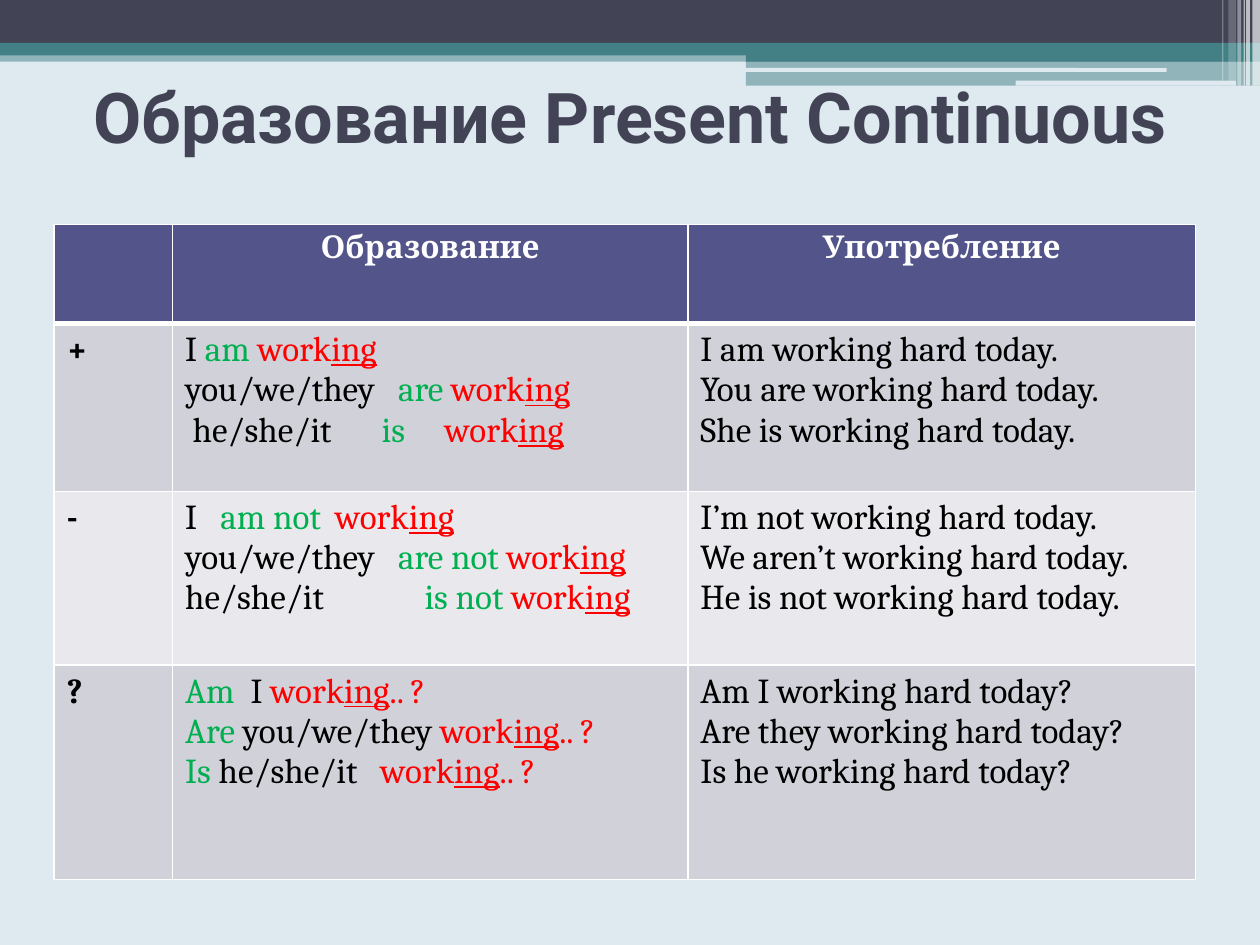
from lxml.etree import SubElement
from pptx import Presentation
from pptx.dml.color import RGBColor
from pptx.enum.shapes import MSO_SHAPE as Preset
from pptx.enum.text import MSO_ANCHOR as Anchor, PP_ALIGN as Align
from pptx.oxml.ns import qn
from pptx.util import Inches, Pt

SLIDE_WIDTH, SLIDE_HEIGHT = Inches(10), Inches(7.5)
GRID_COLUMNS, GRID_ROWS = 1000, 750
PALE, DARK, TEAL, WHITE, BLACK = "DEE9F0", "424456", "438086", "FFFFFF", "000000"
GREEN, RED = "00B050", "FF0000"
HEADER_FILL, BAND_FILLS = "53548A", ("D1D1DA", "E9E9ED")

BANDS = [
    (0, 40, 1000, 9, TEAL, 50),
    (0, 0, 1000, 34, DARK, 100),
    (0, 34, 1000, 10, TEAL, 100),
    (592, 39, 408, 10, TEAL, 100),
    (592, 48, 408, 20, TEAL, 50),
]
SLOTS = [(591, 54, 335, 3, PALE, 100), (806, 64, 175, 4, PALE, 100)]
STRIPES = [(994, 6, 68, 65), (989, 3, 68, 65), (987, 1, 68, 60),
           (982, 3, 68, 40), (975, 6, 64, 20), (970, 1, 64, 30)]

TABLE_COLUMNS, TABLE_ROWS = (94, 409, 403), (79, 133, 138, 170)
HEADINGS = ("", "Образование", "Употребление")


def color(hex_string):
    """Turn a hex string into a colour."""
    return RGBColor.from_string(hex_string)


def across(columns):
    """Length of a number of grid columns."""
    return int(SLIDE_WIDTH * columns / GRID_COLUMNS)


def down(rows):
    """Length of a number of grid rows."""
    return int(SLIDE_HEIGHT * rows / GRID_ROWS)


def add_block(slide, left, top, width, height, fill, opacity, preset=Preset.RECTANGLE):
    """Add a plain filled block, see-through below 100 percent opacity."""
    block = slide.shapes.add_shape(preset, across(left), down(top), across(width), down(height))
    block.shadow.inherit = False
    block.line.fill.background()
    block.fill.solid()
    block.fill.fore_color.rgb = color(fill)
    if opacity < 100:
        tint = block.fill._xPr.find(qn("a:solidFill"))[0]
        SubElement(tint, qn("a:alpha"), val=str(opacity * 1000))


def write(paragraph, text, size=20, font="Cambria", ink=BLACK, bold=False, underline=False):
    """Append formatted text to a paragraph."""
    run = paragraph.add_run()
    run.text = text
    run.font.size, run.font.name = Pt(size), font
    run.font.bold, run.font.underline = bold, underline
    run.font.color.rgb = color(ink)


def set_tabs(paragraph, stops, indent):
    """Give a paragraph its tab stops and left indent in grid columns."""
    properties = paragraph._p.get_or_add_pPr()
    if indent:
        properties.set("marL", str(across(indent)))
        properties.set("indent", "0")
    if stops:
        tabs = SubElement(properties, qn("a:tabLst"))
        for stop in stops:
            SubElement(tabs, qn("a:tab"), pos=str(across(stop)), algn="l")


def statement(subject, auxiliary, stops=(), indent=0):
    """Describe a statement: subject, auxiliary and the ing form."""
    parts = [(subject, BLACK), (auxiliary, GREEN), ("work", RED), ("ing", RED)]
    return parts, stops, indent


def question(auxiliary, subject, stops=()):
    """Describe a question: auxiliary, subject and the ing form."""
    parts = [(auxiliary, GREEN), (subject, BLACK), ("work", RED), ("ing", RED), (".. ?", RED)]
    return parts, stops, 0


def sentence(text):
    """Describe an example sentence."""
    return [(text, BLACK)], (), 0


TENSE_FORMS = [
    ("+",
     [statement("I ", "am "),
      statement("you/we/they\t", "are ", [169]),
      statement("he/she/it\t", "is\t", [136, 214], 6)],
     ["I am working hard today.", "You are working hard today.", "She is working hard today."]),
    ("-",
     [statement("I\t", "am not\t", [28, 119]),
      statement("you/we/they\t", "are not ", [169]),
      statement("he/she/it\t", "is not ", [190])],
     ["I’m not working hard today.", "We aren’t working hard today.",
      "He is not working hard today."]),
    ("?",
     [question("Am\t", "I ", [52]),
      question("Are", " you/we/they "),
      question("Is ", "he/she/it\t", [155])],
     ["Am I working hard today?", "Are they working hard today?", "Is he working hard today?"]),
]


def fill_lines(cell, lines):
    """Write described lines into a cell, one paragraph each."""
    frame = cell.text_frame
    for index, (parts, stops, indent) in enumerate(lines):
        paragraph = frame.add_paragraph() if index else frame.paragraphs[0]
        set_tabs(paragraph, stops, indent)
        for text, ink in parts:
            write(paragraph, text, ink=ink, underline=text == "ing")


def style_cell(cell, fill, top=1, bottom=1):
    """Fill a cell and draw its white borders, widths in points."""
    properties = cell._tc.get_or_add_tcPr()
    for side, width in (("L", 1), ("R", 1), ("T", top), ("B", bottom)):
        border = SubElement(properties, qn(f"a:ln{side}"), w=str(Pt(width)))
        SubElement(SubElement(border, qn("a:solidFill")), qn("a:srgbClr"), val=WHITE)
    cell.fill.solid()
    cell.fill.fore_color.rgb = color(fill)


def add_decoration(slide):
    """Draw the bands, slots and stripes along the top edge."""
    for band in BANDS:
        add_block(slide, *band)
    for slot in SLOTS:
        add_block(slide, *slot, preset=Preset.ROUNDED_RECTANGLE)
    for left, width, height, opacity in STRIPES:
        add_block(slide, left, 0, width, height, WHITE, opacity)


def add_title(slide, text):
    """Place and fill the title placeholder."""
    title = slide.shapes.title
    title.left, title.top = across(50), down(21)
    title.width, title.height = across(900), down(142)
    title.text_frame.vertical_anchor = Anchor.MIDDLE
    heading = title.text_frame.paragraphs[0]
    heading.alignment = Align.CENTER
    write(heading, text, size=40, font="Roboto", ink=DARK, bold=True)


def add_tense_table(slide):
    """Build the table of forms and examples."""
    table = slide.shapes.add_table(
        len(TABLE_ROWS), len(TABLE_COLUMNS), across(43), down(178),
        across(sum(TABLE_COLUMNS)), down(sum(TABLE_ROWS))).table
    for column, width in zip(table.columns, TABLE_COLUMNS):
        column.width = across(width)
    for row, height in zip(table.rows, TABLE_ROWS):
        row.height = down(height)
    for index, heading in enumerate(HEADINGS):
        cell = table.cell(0, index)
        style_cell(cell, HEADER_FILL, bottom=3)
        if heading:
            paragraph = cell.text_frame.paragraphs[0]
            paragraph.alignment = Align.CENTER
            write(paragraph, heading, size=18, ink=WHITE, bold=True)
    for row, (sign, forms, examples) in enumerate(TENSE_FORMS, 1):
        for index in range(len(TABLE_COLUMNS)):
            style_cell(table.cell(row, index), BAND_FILLS[(row - 1) % 2], top=3 if row == 1 else 1)
        write(table.cell(row, 0).text_frame.paragraphs[0], sign, bold=True)
        fill_lines(table.cell(row, 1), forms)
        fill_lines(table.cell(row, 2), map(sentence, examples))


def main():
    """Build the slide and save it."""
    deck = Presentation()
    deck.slide_width, deck.slide_height = SLIDE_WIDTH, SLIDE_HEIGHT
    slide = deck.slides.add_slide(deck.slide_layouts[5])
    slide.background.fill.solid()
    slide.background.fill.fore_color.rgb = color(PALE)
    add_decoration(slide)
    add_title(slide, "Образование Present Continuous")
    add_tense_table(slide)
    deck.save("out.pptx")


if __name__ == "__main__":
    main()
